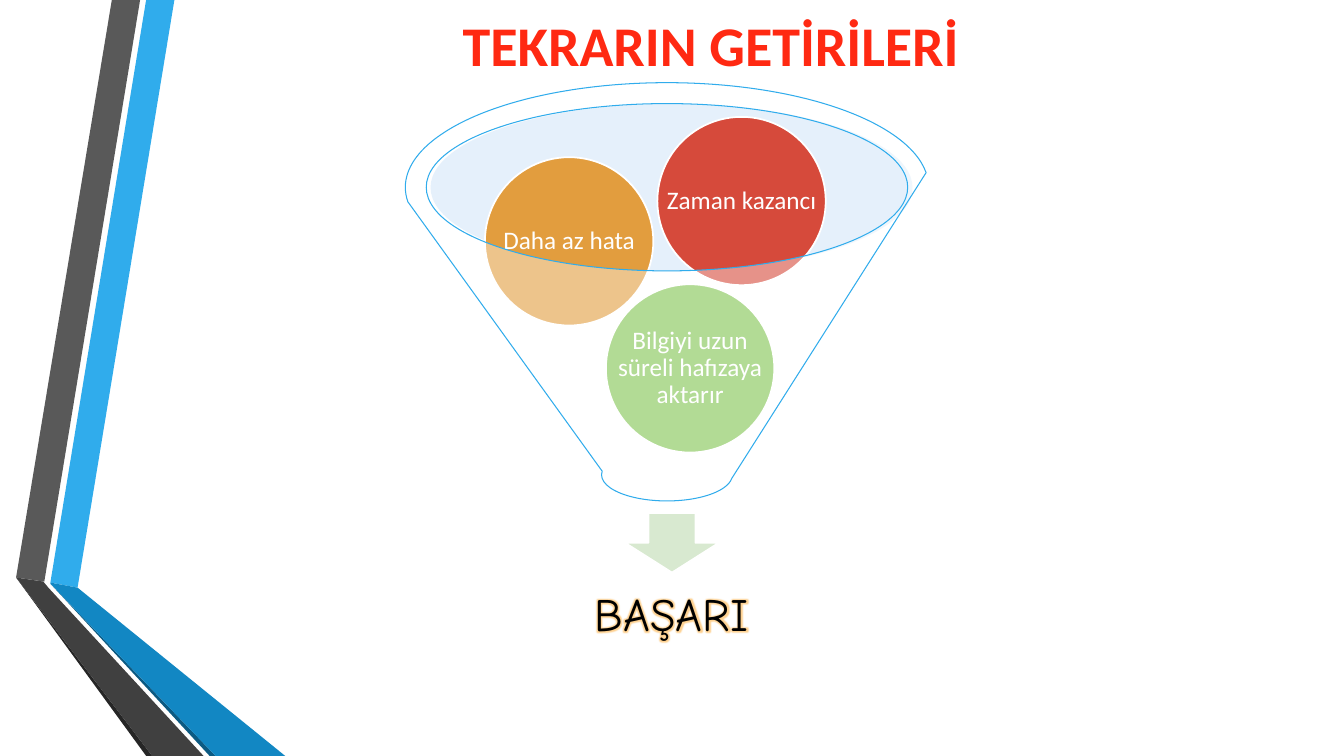
from dataclasses import dataclass

from lxml.etree import SubElement
from pptx import Presentation
from pptx.dml.color import RGBColor
from pptx.enum.shapes import MSO_SHAPE as Preset
from pptx.enum.text import MSO_ANCHOR as Anchor, PP_ALIGN as Align
from pptx.oxml.ns import qn
from pptx.shapes.autoshape import Shape
from pptx.slide import Slide
from pptx.util import Inches, Pt


@dataclass(frozen=True)
class Theme:
    body_font: str = "Calibri"
    result_font: str = "Comic Neue"
    title_size: float = 40
    result_size: float = 33
    ball_size: float = 18
    title: str = "FF2912"
    result: str = "000000"
    glow: str = "FFB347"
    white: str = "FFFFFF"
    accent: str = "30ACEC"
    rim: str = "BEDBF6"
    arrow: str = "D8E9D0"


@dataclass(frozen=True)
class Box:
    left: float
    top: float
    width: float
    height: float

    def lengths(self) -> list[Inches]:
        return [Inches(side) for side in (self.left, self.top, self.width, self.height)]


@dataclass(frozen=True)
class Ribbon:
    color: str
    points: tuple[tuple[float, float], ...]


@dataclass(frozen=True)
class Ball:
    text: str
    left: float
    top: float
    color: str


@dataclass(frozen=True)
class TextStyle:
    font: str
    size: float
    color: str
    bold: bool = False
    inset: float = 0.03
    line_spacing: float = 0.9


THEME = Theme()
BALL_DIAMETER = 1.67
TITLE_STYLE = TextStyle(THEME.body_font, THEME.title_size, THEME.title, True, 0.1, 1.0)
BALL_STYLE = TextStyle(THEME.body_font, THEME.ball_size, THEME.white)
RESULT_STYLE = TextStyle(THEME.result_font, THEME.result_size, THEME.result, inset=0.26)

RIBBONS = (
    Ribbon("30ACEC", ((0.5, 5.78), (0.77, 5.83), (1.73, 0), (1.45, 0))),
    Ribbon("595959", ((1.39, 0), (1.11, 0), (0.16, 5.73), (0.44, 5.77))),
    Ribbon("262626", ((0.16, 5.73), (1.45, 7.5), (1.51, 7.5))),
    Ribbon("0C5A82", ((0.5, 5.79), (2.08, 7.5), (2.14, 7.5))),
    Ribbon("1287C3", ((0.5, 5.79), (2.14, 7.5), (2.83, 7.5), (0.77, 5.83), (0.5, 5.78))),
    Ribbon("404040", ((2.02, 7.5), (0.48, 5.83), (0.43, 5.77), (0.16, 5.73), (1.51, 7.5))),
)
BALLS = (
    Ball("Bilgiyi uzun süreli hafızaya aktarır", 6.01, 2.82, "80C34F"),
    Ball("Daha az hata", 4.81, 1.56, "E29D3E"),
    Ball("Zaman kazancı", 6.52, 1.16, "D64A3B"),
)


def paint(shape: Shape, fill: str, line: str | None = None,
          line_width: float = 1.25, opacity: int = 100) -> None:
    shape.shadow.inherit = False
    shape.fill.solid()
    shape.fill.fore_color.rgb = RGBColor.from_string(fill)
    if opacity < 100:
        color = shape.fill._xPr.find(qn("a:solidFill"))[0]
        SubElement(color, qn("a:alpha"), val=str(opacity * 1000))
    if line is None:
        shape.line.fill.background()
    else:
        shape.line.color.rgb = RGBColor.from_string(line)
        shape.line.width = Pt(line_width)


def add_ribbon(slide: Slide, ribbon: Ribbon) -> None:
    start, *rest = [(Inches(x), Inches(y)) for x, y in ribbon.points]
    builder = slide.shapes.build_freeform(*start)
    builder.add_line_segments(rest, close=True)
    paint(builder.convert_to_shape(), ribbon.color)


def add_preset(slide: Slide, preset: Preset, box: Box) -> Shape:
    return slide.shapes.add_shape(preset, *box.lengths())


def add_text(slide: Slide, text: str, box: Box, style: TextStyle) -> Shape:
    shape = slide.shapes.add_textbox(*box.lengths())
    frame = shape.text_frame
    frame.word_wrap = True
    frame.vertical_anchor = Anchor.MIDDLE
    frame.margin_left = frame.margin_right = Inches(style.inset)
    frame.margin_top = frame.margin_bottom = Inches(style.inset)
    paragraph = frame.paragraphs[0]
    paragraph.text = text
    paragraph.alignment = Align.CENTER
    paragraph.line_spacing = style.line_spacing
    paragraph.font.name = style.font
    paragraph.font.size = Pt(style.size)
    paragraph.font.bold = style.bold
    paragraph.font.color.rgb = RGBColor.from_string(style.color)
    return shape


def add_glow(shape: Shape, color: str, radius: float, opacity: int) -> None:
    properties = shape.text_frame.paragraphs[0].runs[0]._r.get_or_add_rPr()
    effects = SubElement(properties, qn("a:effectLst"))
    glow = SubElement(effects, qn("a:glow"), rad=str(Pt(radius)))
    glow_color = SubElement(glow, qn("a:srgbClr"), val=color)
    SubElement(glow_color, qn("a:alpha"), val=str(opacity * 1000))


def add_ball(slide: Slide, ball: Ball) -> None:
    box = Box(ball.left, ball.top, BALL_DIAMETER, BALL_DIAMETER)
    paint(add_preset(slide, Preset.OVAL, box), ball.color, THEME.white)
    add_text(slide, ball.text, box, BALL_STYLE)


def main() -> None:
    presentation = Presentation()
    presentation.slide_width = Inches(13.33)
    presentation.slide_height = Inches(7.5)
    slide = presentation.slides.add_slide(presentation.slide_layouts[6])

    for ribbon in RIBBONS:
        add_ribbon(slide, ribbon)
    add_text(slide, "TEKRARIN GETİRİLERİ", Box(1.57, -0.52, 10.96, 1.92), TITLE_STYLE)

    rim = add_preset(slide, Preset.OVAL, Box(4.27, 1.03, 4.78, 1.66))
    paint(rim, THEME.rim, opacity=40)
    arrow = add_preset(slide, Preset.DOWN_ARROW, Box(6.2, 5.09, 0.93, 0.59))
    paint(arrow, THEME.arrow, THEME.white)
    result = add_text(slide, "BAŞARI", Box(4.44, 5.56, 4.44, 1.11), RESULT_STYLE)
    add_glow(result, THEME.glow, 5, 60)

    for ball in BALLS:
        add_ball(slide, ball)
    funnel = add_preset(slide, Preset.FUNNEL, Box(4.02, 0.82, 5.19, 4.15))
    paint(funnel, THEME.white, THEME.accent, 0.75, 40)

    presentation.save("out.pptx")


if __name__ == "__main__":
    main()
